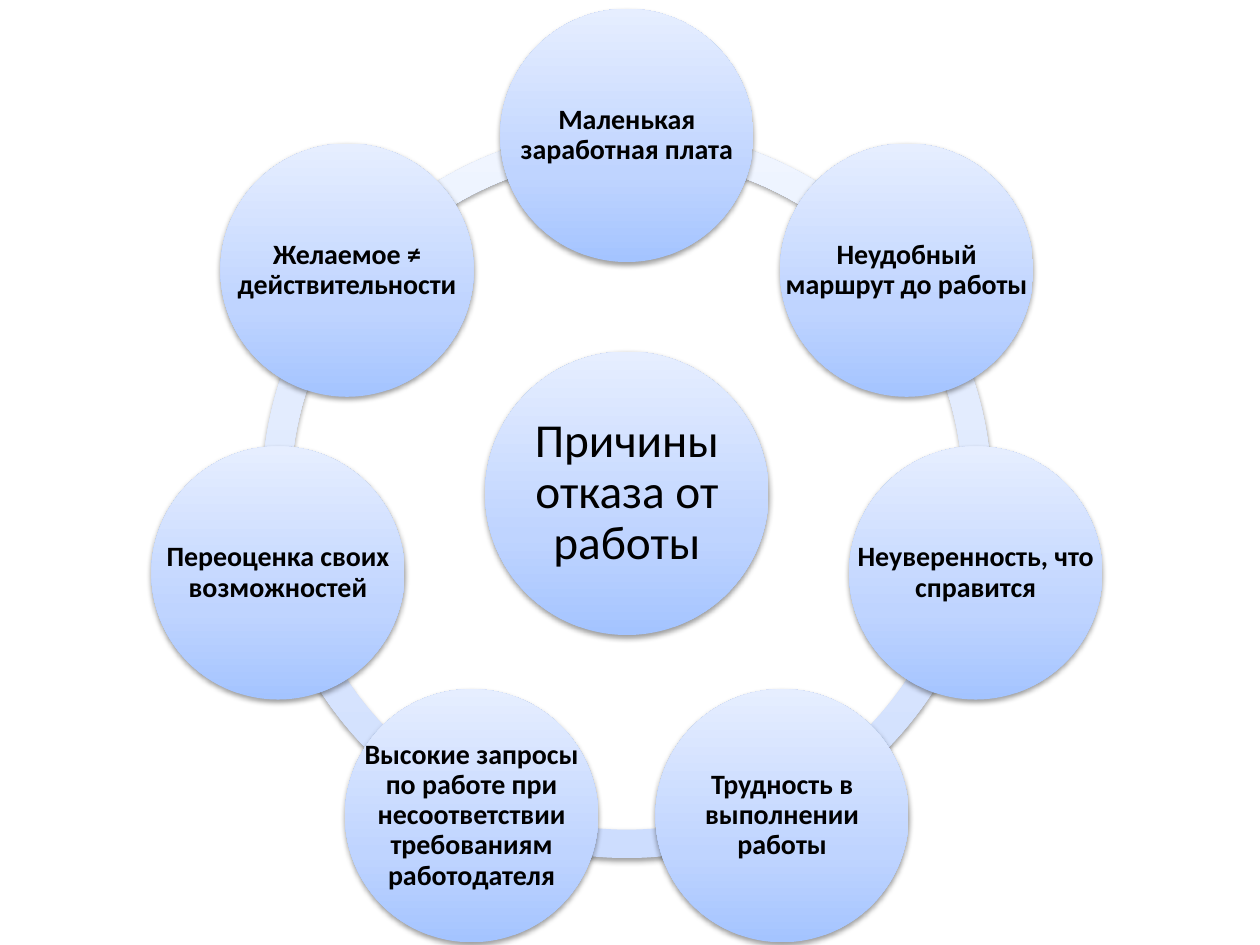
import math
from dataclasses import dataclass

from pptx import Presentation
from pptx import util as u
from pptx.dml import color
from pptx.enum import shapes, text
from pptx.oxml import ns, parse_xml


@dataclass(frozen=True)
class Theme:
    font: str = "Calibri"
    ink: str = "000000"
    ring: tuple = ((0, "CDDDFE"), (35, "DBE6FE"), (100, "F0F5FF"))
    disc: tuple = ((0, "A4C4FF"), (35, "BFD4FF"), (100, "E6EEFF"))
    hub_size: int = 27
    reason_size: int = 16


THEME = Theme()
HUB = "Причины отказа от работы"
REASONS = [
    "Маленькая заработная плата",
    "Неудобный маршрут до работы",
    "Неуверенность, что справится",
    "Трудность в выполнении работы",
    "Высокие запросы по работе при несоответствии требованиям работодателя",
    "Переоценка своих возможностей",
    "Желаемое ≠ действительности",
]


def square(center_x, center_y, size):
    left, top = center_x - size / 2, center_y - size / 2
    return [u.Inches(length) for length in (left, top, size, size)]


def paint(shape, stops):
    shape.line.fill.background()
    shape.fill.gradient()
    shape.fill.gradient_angle = 90
    properties = shape.fill._xPr
    stop_list = properties.find(ns.qn("a:gradFill")).find(ns.qn("a:gsLst"))
    stop_list.clear()
    for position, rgb in stops:
        stop_list.append(parse_xml(
            f'<a:gs {ns.nsdecls("a")} pos="{position * 1000}">'
            f'<a:srgbClr val="{rgb}"/></a:gs>'))
    shape.shadow.inherit = False
    properties.find(ns.qn("a:effectLst")).append(parse_xml(
        f'<a:outerShdw {ns.nsdecls("a")} blurRad="40000" dist="20000" '
        'dir="5400000" rotWithShape="0"><a:srgbClr val="000000">'
        '<a:alpha val="38000"/></a:srgbClr></a:outerShdw>'))


def add_ring(group, center_x, center_y, size, count):
    full_turn, top_angle = 216, 162
    step = full_turn / count
    for index in range(count):
        end = top_angle - step * index
        arc = group.shapes.add_shape(
            shapes.MSO_SHAPE.BLOCK_ARC, *square(center_x, center_y, size))
        arc.adjustments[0] = (end - step) % full_turn
        arc.adjustments[1] = end % full_turn
        arc.adjustments[2] = 0.039
        paint(arc, THEME.ring)


def add_disc(group, center_x, center_y, size, wording, points, inset, bold):
    box = square(center_x, center_y, size)
    disc = group.shapes.add_shape(shapes.MSO_SHAPE.OVAL, *box)
    paint(disc, THEME.disc)

    frame = group.shapes.add_textbox(*box).text_frame
    frame.word_wrap = True
    frame.vertical_anchor = text.MSO_ANCHOR.MIDDLE
    frame.margin_left = frame.margin_right = u.Inches(inset)
    frame.margin_top = frame.margin_bottom = u.Inches(inset)
    paragraph = frame.paragraphs[0]
    paragraph.alignment = text.PP_ALIGN.CENTER
    paragraph.line_spacing = 0.9
    run = paragraph.add_run()
    run.text = wording
    run.font.name = THEME.font
    run.font.size = u.Pt(points)
    run.font.bold = bold
    run.font.color.rgb = color.RGBColor.from_string(THEME.ink)


def add_radial_cycle(slide, left, top, size):
    center_x, center_y = left + size / 2, top + size / 2
    orbit = 2.84
    group = slide.shapes.add_group_shape()
    add_ring(group, center_x, center_y, size, len(REASONS))
    add_disc(group, center_x, center_y, 2.25, HUB, THEME.hub_size, 0.04, False)
    for index, reason in enumerate(REASONS):
        angle = 2 * math.pi * index / len(REASONS)
        add_disc(group, center_x + orbit * math.sin(angle),
                 center_y - orbit * math.cos(angle), 2.01,
                 reason, THEME.reason_size, 0.03, True)


def main():
    deck = Presentation()
    deck.slide_width, deck.slide_height = u.Inches(10), u.Inches(7.5)
    slide = deck.slides.add_slide(deck.slide_layouts[6])
    add_radial_cycle(slide, 2.08, 1.02, 5.79)
    deck.save("out.pptx")


if __name__ == "__main__":
    main()
